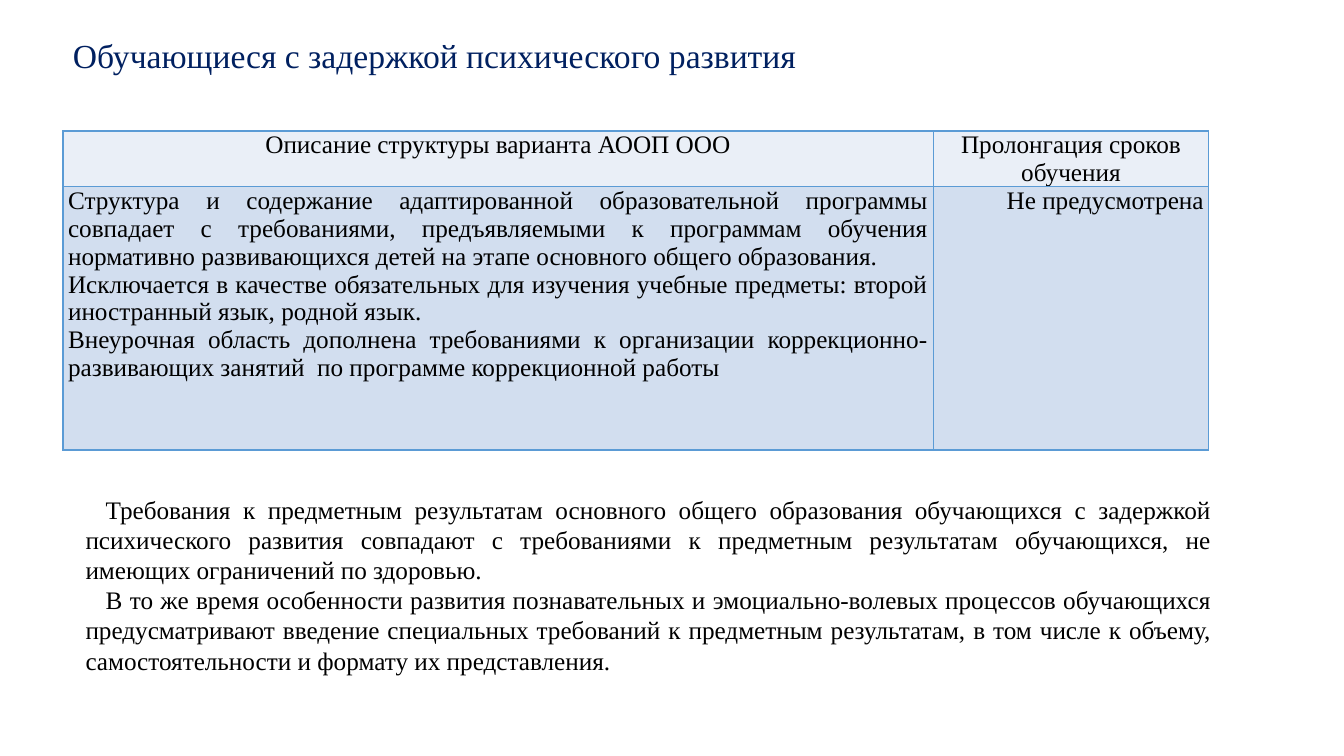
from lxml import etree
from pptx import Presentation
from pptx.dml.color import RGBColor
from pptx.enum.text import MSO_ANCHOR, PP_ALIGN
from pptx.oxml.ns import qn
from pptx.util import Pt

LEFT, CENTER, RIGHT, JUSTIFY = PP_ALIGN.LEFT, PP_ALIGN.CENTER, PP_ALIGN.RIGHT, PP_ALIGN.JUSTIFY
TOP, MIDDLE = MSO_ANCHOR.TOP, MSO_ANCHOR.MIDDLE

# Content
TITLE = ["Обучающиеся с задержкой психического развития"]
HEADER = [
    (["Описание структуры варианта АООП ООО"], CENTER),
    (["Пролонгация сроков обучения"], CENTER),
]
PROGRAMME = [
    ([
        "Структура и содержание адаптированной образовательной программы совпадает с требованиями, "
        "предъявляемыми к программам обучения нормативно развивающихся детей на этапе основного "
        "общего образования.",
        "Исключается в качестве обязательных для изучения учебные предметы: второй иностранный язык, "
        "родной язык.",
        "Внеурочная область дополнена требованиями к организации коррекционно-развивающих занятий  "
        "по программе коррекционной работы",
    ], JUSTIFY),
    (["Не предусмотрена"], RIGHT),
]
REQUIREMENTS = [
    "Требования к предметным результатам основного общего образования обучающихся с задержкой "
    "психического развития совпадают с требованиями к предметным результатам обучающихся, "
    "не имеющих ограничений по здоровью.",
    "В то же время особенности развития познавательных и эмоциально-волевых процессов обучающихся "
    "предусматривают введение специальных требований к предметным результатам, в том числе к объему, "
    "самостоятельности и формату их представления.",
]

# Style and layout, in points
FONT = "Times New Roman"
NAVY, BLACK, BORDER = "002060", "000000", "5B9BD5"
ROWS = [(HEADER, 31, "EAEFF7"), (PROGRAMME, 188, "D2DEEF")]
COLUMNS = [621.5, 197]
TABLE_LEFT, TABLE_TOP = 45, 93.6
CELL_INSET = 3.6
FIRST_LINE = 14.4


def color(hex_code):
    return RGBColor.from_string(hex_code)


def write(frame, texts, size, ink, align):
    for i, text in enumerate(texts):
        paragraph = frame.paragraphs[0] if i == 0 else frame.add_paragraph()
        paragraph.text = text
        paragraph.alignment = align
        paragraph.font.name = FONT
        paragraph.font.size = Pt(size)
        paragraph.font.color.rgb = color(ink)


def add_text(slide, box, texts, size, ink, align, anchor):
    frame = slide.shapes.add_textbox(*map(Pt, box)).text_frame
    frame.word_wrap = True
    frame.vertical_anchor = anchor
    write(frame, texts, size, ink, align)
    return frame


def outline(cell):
    properties = cell._tc.get_or_add_tcPr()
    for i, side in enumerate(("a:lnL", "a:lnR", "a:lnT", "a:lnB")):
        line = etree.Element(qn(side), w=str(Pt(1)))
        fill = etree.SubElement(line, qn("a:solidFill"))
        etree.SubElement(fill, qn("a:srgbClr"), val=BORDER)
        properties.insert(i, line)


def add_programme_table(slide):
    height = sum(row_height for _, row_height, _ in ROWS)
    table = slide.shapes.add_table(
        len(ROWS), len(COLUMNS), Pt(TABLE_LEFT), Pt(TABLE_TOP), Pt(sum(COLUMNS)), Pt(height)
    ).table
    for column, width in zip(table.columns, COLUMNS):
        column.width = Pt(width)
    for r, (contents, row_height, background) in enumerate(ROWS):
        table.rows[r].height = Pt(row_height)
        for c, (texts, align) in enumerate(contents):
            cell = table.cell(r, c)
            cell.margin_left = cell.margin_right = Pt(CELL_INSET)
            cell.margin_top = cell.margin_bottom = 0
            cell.fill.solid()
            cell.fill.fore_color.rgb = color(background)
            outline(cell)
            write(cell.text_frame, texts, 18, BLACK, align)


def main():
    deck = Presentation()
    deck.slide_width, deck.slide_height = Pt(960), Pt(540)
    slide = deck.slides.add_slide(deck.slide_layouts[6])

    # Table
    add_programme_table(slide)

    # Requirements below the table
    requirements = add_text(slide, (54, 349.2, 818.5, 138), REQUIREMENTS, 18, BLACK, JUSTIFY, TOP)
    for paragraph in requirements.paragraphs:
        paragraph._p.get_or_add_pPr().set("indent", str(Pt(FIRST_LINE)))

    # Title
    title = add_text(slide, (45, -10.8, 828, 104.4), TITLE, 24, NAVY, LEFT, MIDDLE)
    title.paragraphs[0].line_spacing = 0.9

    deck.save("out.pptx")


if __name__ == "__main__":
    main()
